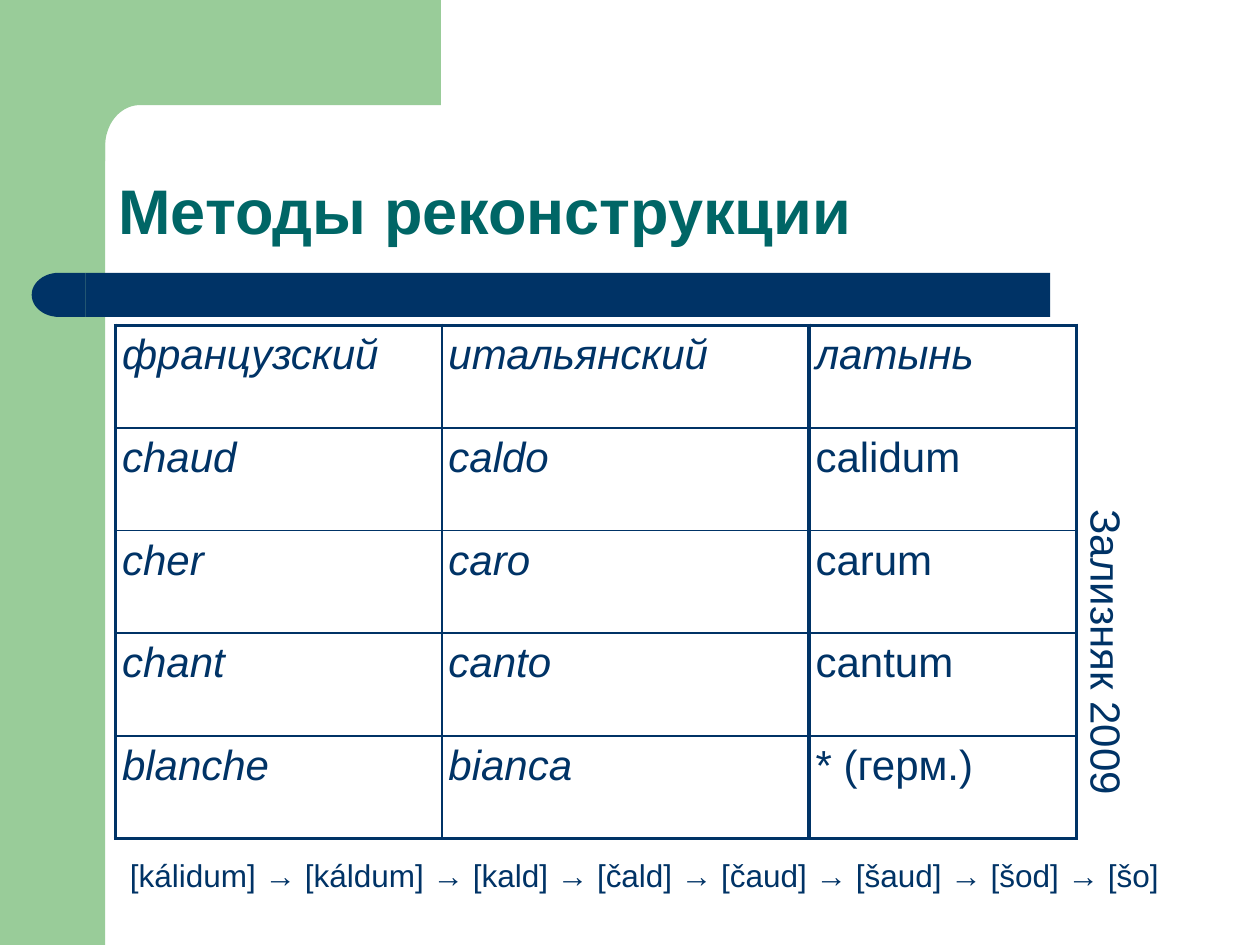
import math
from collections import namedtuple

from lxml import etree
from pptx import Presentation
from pptx import util as u
from pptx.dml import color
from pptx.enum import shapes, text
from pptx.oxml import ns

Box = namedtuple("Box", "left top width height")

GREEN = color.RGBColor(0x99, 0xCC, 0x99)
NAVY = color.RGBColor(0x00, 0x33, 0x66)
TEAL = color.RGBColor(0x00, 0x66, 0x66)
THICK, THIN = 2.25, 1
INSET = u.Cm(0.13)


def in_cm(box):
    return [u.Cm(length) for length in box]


def paint(shape, fill):
    shape.shadow.inherit = False
    shape.fill.solid()
    shape.fill.fore_color.rgb = fill
    shape.line.fill.background()


def arc(center, radii, start, end, steps=24):
    angles = [math.radians(start + (end - start) * i / steps) for i in range(steps + 1)]
    return [(center[0] + radii[0] * math.cos(a), center[1] - radii[1] * math.sin(a))
            for a in angles]


def add_outline(page, box, points, fill):
    spots = [(u.Cm(box.left + x), u.Cm(box.top + y)) for x, y in points]
    builder = page.shapes.build_freeform(*spots[0])
    builder.add_line_segments(spots[1:], close=True)
    paint(builder.convert_to_shape(), fill)


def add_frame(page, box):
    band = 2.12
    side = page.shapes.add_shape(shapes.MSO_SHAPE.RECTANGLE,
                                 *in_cm(box._replace(width=band)))
    paint(side, GREEN)
    inner, foot = 1.27, 3.25
    curve = arc((2.82, 2.95), (0.7, 0.83), 90, 180)
    add_outline(page, box,
                [(inner, 0), (box.width, 0), (box.width, band), *curve,
                 (band, foot), (inner, foot)], GREEN)


def add_rule(page, box):
    cap = 1.08
    bar = page.shapes.add_shape(
        shapes.MSO_SHAPE.ROUNDED_RECTANGLE,
        *in_cm(box._replace(left=box.left + cap, width=box.width - cap)))
    bar.adjustments[0] = 0
    paint(bar, NAVY)
    half = box.height / 2
    curve = arc((0.55, half), (0.55, half), 90, 270)
    add_outline(page, box, [(cap, 0), *curve, (cap, box.height)], NAVY)


def set_insets(frame):
    frame.margin_left = frame.margin_right = INSET
    frame.margin_top = frame.margin_bottom = INSET


def write(para, words, size, rgb):
    para.text = words
    para.font.name = "Arial"
    para.font.size = u.Pt(size)
    para.font.color.rgb = rgb


def add_title(page, box, words):
    title = page.shapes.title
    title.left, title.top, title.width, title.height = in_cm(box)
    frame = title.text_frame
    set_insets(frame)
    frame.word_wrap = True
    frame.auto_size = text.MSO_AUTO_SIZE.NONE
    frame.vertical_anchor = text.MSO_ANCHOR.BOTTOM
    para = frame.paragraphs[0]
    write(para, words, 36, TEAL)
    para.font.bold = True
    para.alignment = text.PP_ALIGN.LEFT
    para.line_spacing = 0.9


def add_border(cell, side, points):
    props = cell._tc.get_or_add_tcPr()
    line = etree.SubElement(props, ns.qn(f"a:ln{side}"), w=str(u.Pt(points)))
    fill = etree.SubElement(line, ns.qn("a:solidFill"))
    etree.SubElement(fill, ns.qn("a:srgbClr"), val=str(NAVY))


def add_words_table(page, box, widths, rows, italic_rows, right_edge):
    table = page.shapes.add_table(len(rows), len(widths), *in_cm(box)).table
    table.first_row = table.horz_banding = False
    for column, width in zip(table.columns, widths):
        column.width = u.Cm(width)
    for r, words in enumerate(rows):
        table.rows[r].height = u.Cm(box.height / len(rows))
        for c, word in enumerate(words):
            cell = table.cell(r, c)
            set_insets(cell)
            para = cell.text_frame.paragraphs[0]
            write(para, word, 24, NAVY)
            para.font.italic = r < italic_rows
            para.space_before = u.Pt(5)
            add_border(cell, "L", THICK if c == 0 else THIN)
            add_border(cell, "R", right_edge if c == len(widths) - 1 else THIN)
            add_border(cell, "T", THICK if r == 0 else THIN)
            add_border(cell, "B", THICK if r == len(rows) - 1 else THIN)
            cell.fill.background()


def add_label(page, box, words, size, wrap=True, rotation=0, before=0):
    label = page.shapes.add_textbox(*in_cm(box))
    label.rotation = rotation
    frame = label.text_frame
    set_insets(frame)
    frame.word_wrap = wrap
    frame.auto_size = text.MSO_AUTO_SIZE.SHAPE_TO_FIT_TEXT
    para = frame.paragraphs[0]
    write(para, words, size, NAVY)
    para.space_before = u.Pt(before)
    return frame


def main():
    deck = Presentation()
    deck.slide_width, deck.slide_height = u.Cm(25.4), u.Cm(19.05)
    page = deck.slides.add_slide(deck.slide_layouts[5])

    add_frame(page, Box(0, 0, 8.89, 19.05))
    add_rule(page, Box(0.64, 5.5, 20.53, 0.89))
    add_title(page, Box(2.26, 2.26, 21.69, 2.87), "Методы реконструкции")

    romance = [("французский", "итальянский"), ("chaud", "caldo"), ("cher", "caro"),
               ("chant", "canto"), ("blanche", "bianca")]
    latin = [("латынь",), ("calidum",), ("carum",), ("cantum",), ("* (герм.)",)]
    grid = Box(2.33, 6.56, 13.98, 10.34)
    add_words_table(page, grid, [6.58, 7.4], romance, len(romance), THICK)
    add_label(page, Box(19.05, 12.83, 6.6, 1.22), "Зализняк 2009", 24,
              rotation=90, before=14)
    add_words_table(page, grid._replace(left=grid.left + grid.width, width=5.39),
                    [5.39], latin, 1, THICK)

    stages = ["kálidum", "káldum", "kald", "čald", "čaud", "šaud", "šod", "šo"]
    chain = add_label(page, Box(2.49, 17.15, 21.21, 0.97),
                      " → ".join(f"[{stage}]" for stage in stages), 18, wrap=False)
    chain.vertical_anchor = text.MSO_ANCHOR.MIDDLE
    deck.save("out.pptx")


if __name__ == "__main__":
    main()
